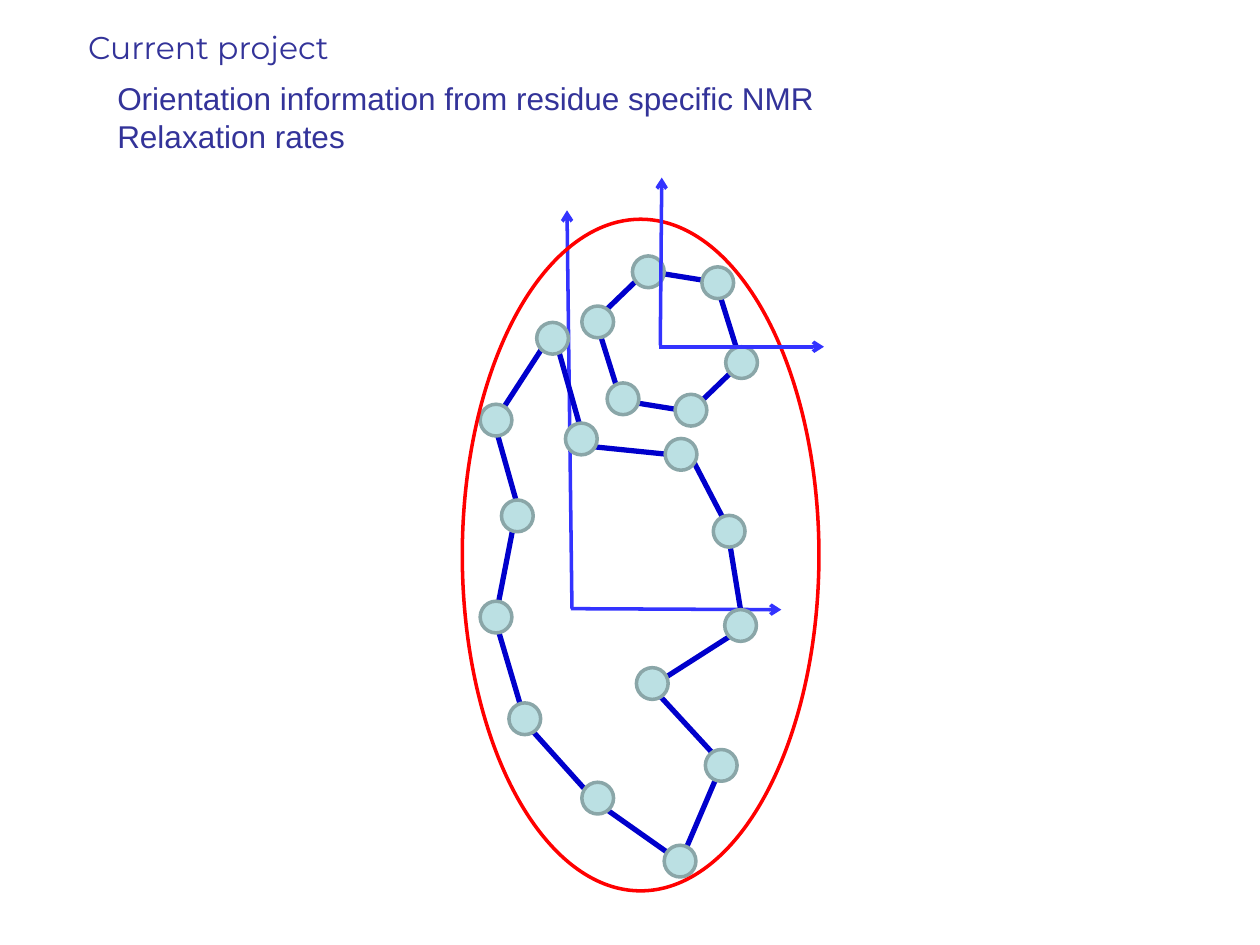
from lxml import etree
from pptx import Presentation
from pptx.dml.color import RGBColor
from pptx.enum.shapes import MSO_CONNECTOR, MSO_SHAPE
from pptx.enum.text import MSO_ANCHOR, MSO_AUTO_SIZE, PP_ALIGN
from pptx.oxml.ns import qn
from pptx.util import Cm, Pt

STRAIGHT = MSO_CONNECTOR.STRAIGHT
OVAL, HEXAGON = MSO_SHAPE.OVAL, MSO_SHAPE.HEXAGON
TOP, LEFT, NO_FIT = MSO_ANCHOR.TOP, PP_ALIGN.LEFT, MSO_AUTO_SIZE.NONE

INK = RGBColor(0x33, 0x33, 0x99)
AXIS = RGBColor(0x33, 0x33, 0xFF)
BOND = RGBColor(0x00, 0x00, 0xCC)
BEAD = RGBColor(0xBB, 0xE0, 0xE3)
RIM = RGBColor(0x8A, 0xA6, 0xA8)
RED = RGBColor(0xFF, 0x00, 0x00)

SIZE = 0.64
RING = [(14.63, 6.99), (14.15, 5.38), (12.75, 5.16),
        (11.73, 6.17), (12.24, 7.72), (13.61, 7.95)]
CHAIN = [(12.83, 13.46), (14.61, 12.29), (9.68, 12.12), (14.38, 10.39),
         (10.11, 10.08), (11.73, 15.77), (13.39, 17.04), (14.22, 15.11),
         (11.4, 8.53), (10.82, 6.5), (9.68, 8.15), (10.26, 14.17),
         (13.41, 8.84)]
BONDS = [(10.41, 10.29, 9.98, 12.5), (14.63, 15.47, 13.11, 13.82),
         (13.08, 13.87, 14.99, 12.65), (14.99, 12.67, 14.63, 10.46),
         (9.93, 12.32, 10.57, 14.48), (14.76, 10.8, 13.74, 8.84),
         (9.93, 8.41, 10.54, 10.57), (10.46, 14.43, 11.96, 16.1),
         (11.96, 16.13, 13.79, 17.42), (13.67, 17.48, 14.55, 15.42),
         (13.77, 9.19, 11.61, 8.97), (11.79, 8.94, 11.18, 6.78),
         (11.13, 6.71, 9.91, 8.59)]
BODY_AXES = [(11.51, 12.27, 15.75, 12.29), (11.53, 12.27, 11.43, 4.24)]
RING_AXES = [(13.28, 6.99, 16.61, 6.99), (13.31, 6.96, 13.34, 3.58)]


def add_text(holder, box, text, font, wrap):
    """Place a placeholder and fill it with plain left-aligned text."""
    holder.left, holder.top, holder.width, holder.height = map(Cm, box)
    frame = holder.text_frame
    frame.text = text
    frame.word_wrap = wrap
    frame.auto_size = NO_FIT
    frame.vertical_anchor = TOP
    for para in frame.paragraphs:
        props = para._p.get_or_add_pPr()
        props.set("marL", "0")
        props.set("indent", "0")
        etree.SubElement(props, qn("a:buNone"))
        para.alignment = LEFT
        para.space_before = Pt(0)
        for run in para.runs:
            run.font.name = font
            run.font.size = Pt(18)
            run.font.color.rgb = INK


def add_line(slide, ends, color, width, arrow=False):
    """Draw a straight line, with an arrowhead at its end if asked."""
    line = slide.shapes.add_connector(STRAIGHT, *map(Cm, ends))
    line.line.color.rgb = color
    line.line.width = Pt(width)
    props = line._element.spPr
    if arrow:
        etree.SubElement(props.find(qn("a:ln")), qn("a:tailEnd"), type="arrow")
    etree.SubElement(props, qn("a:effectLst"))


def add_shape(slide, kind, box, color, width, fill=None):
    """Draw an outlined preset shape, filled if a colour is given."""
    shape = slide.shapes.add_shape(kind, *map(Cm, box))
    shape.shadow.inherit = False
    shape.line.color.rgb = color
    shape.line.width = Pt(width)
    if fill is None:
        shape.fill.background()
    else:
        shape.fill.solid()
        shape.fill.fore_color.rgb = fill
    return shape


def add_beads(slide, spots):
    """Draw one round bead at each top-left spot."""
    for left, top in spots:
        add_shape(slide, OVAL, (left, top, SIZE, SIZE), RIM, 2, BEAD)


def main():
    """Build the slide and save it."""
    deck = Presentation()
    deck.slide_width, deck.slide_height = Cm(25.4), Cm(19.05)
    slide = deck.slides.add_slide(deck.slide_layouts[1])
    add_text(slide.shapes.title, (1.52, 0.43, 6.32, 1.02),
             "Current project", "Montserrat", False)
    add_text(slide.placeholders[1], (2.11, 1.47, 15.04, 1.8),
             "Orientation information from residue specific NMR\n"
             "Relaxation rates", "Arial", True)

    for ends in BODY_AXES:
        add_line(slide, ends, AXIS, 2, True)
    ring = add_shape(slide, HEXAGON, (11.99, 5.61, 2.97, 2.54), BOND, 3)
    ring.rotation = 252.6
    add_beads(slide, RING)
    for ends in BONDS:
        add_line(slide, ends, BOND, 3)
    add_beads(slide, CHAIN)
    add_shape(slide, OVAL, (9.32, 4.42, 7.19, 13.54), RED, 2)
    for ends in RING_AXES:
        add_line(slide, ends, AXIS, 2, True)
    deck.save("out.pptx")


if __name__ == "__main__":
    main()
